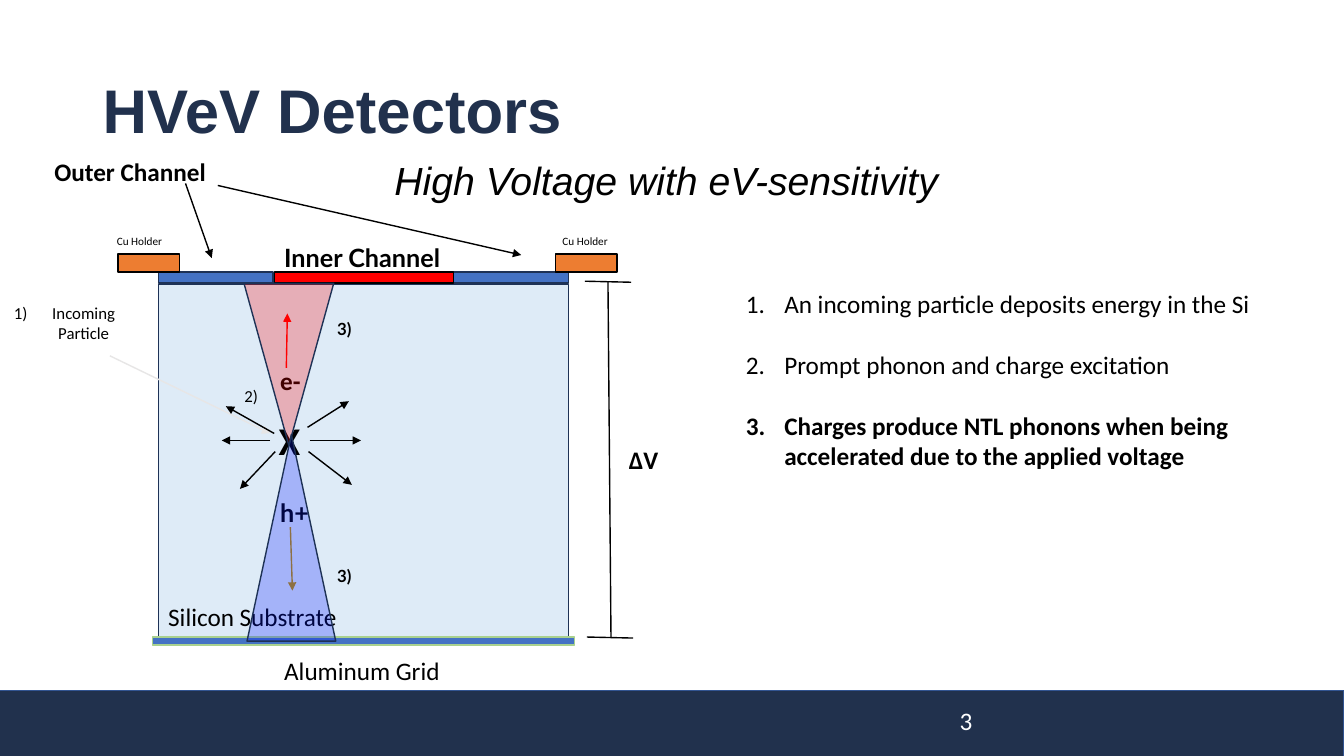
from lxml import etree
from pptx import Presentation, util as u
from pptx.dml import color
from pptx.enum import shapes, text
from pptx.oxml import ns

PX = 9144  # EMU per px, 100 px to the inch
NAVY, EDGE, BLUE, BLACK, WHITE = "21314D", "1E3256", "4472C4", "000000", "FFFFFF"
KIND, ALIGN = shapes.MSO_SHAPE, text.PP_ALIGN

deck = Presentation()
deck.slide_width, deck.slide_height = 1333 * PX, 750 * PX
slide = deck.slides.add_slide(deck.slide_layouts[6])


def rgb(code):
    return color.RGBColor.from_string(code)


def sub(node, tag, **attrs):
    return etree.SubElement(node, ns.qn(tag), attrs)


def shape(box, fill, edge=BLACK, kind=KIND.RECTANGLE, alpha=None, turn=0):
    item = slide.shapes.add_shape(kind, *[n * PX for n in box])
    item.shadow.inherit = False
    item.rotation = turn
    item.fill.solid()
    item.fill.fore_color.rgb = rgb(fill)
    item.line.color.rgb = rgb(edge)
    item.line.width = u.Pt(1)
    if alpha:
        tone = item.fill._xPr.find(".//" + ns.qn("a:srgbClr"))
        sub(tone, "a:alpha", val=str(alpha * 1000))


def line(start, end, tint=BLACK, head=True):
    item = slide.shapes.add_connector(
        shapes.MSO_CONNECTOR.STRAIGHT, *[n * PX for n in (*start, *end)])
    item.line.color.rgb = rgb(tint)
    item.line.width = u.Pt(1)
    if head:
        sub(item.line._get_or_add_ln(), "a:tailEnd", type="triangle")
    sub(item._element.spPr, "a:effectLst")


def style(font, look):
    form = {"size": 18, "name": "Calibri", "color": BLACK, **look}
    for key, value in form.items():
        if key == "color":
            font.color.rgb = rgb(value)
        else:
            setattr(font, key, u.Pt(value) if key == "size" else value)


def label(box, paras, align=ALIGN.LEFT, mid=False, num=None, gap=0, lead=None, **look):
    """Each paragraph is a pair of words and format."""
    frame = slide.shapes.add_textbox(*[n * PX for n in box]).text_frame
    frame.word_wrap = True
    if mid:
        frame.vertical_anchor = text.MSO_ANCHOR.MIDDLE
    for i, (words, form) in enumerate(paras):
        para = frame.paragraphs[0] if i == 0 else frame.add_paragraph()
        if num:
            props = para._p.get_or_add_pPr()
            props.set("marL", str(38 * PX))
            props.set("indent", str(-38 * PX))
            sub(props, "a:buFont", typeface="+mj-lt")
            sub(props, "a:buAutoNum", type=num)
        para.alignment = align
        if lead:
            para.line_spacing = lead
        if i:
            para.space_before = u.Pt(gap)
        run = para.add_run()
        run.text = words
        style(run.font, {**look, **form})


def note(box, words, **look):
    label(box, [(words, {})], **look)


def footer(x, y, w, h):
    shape((x, y, w, h), NAVY, "325491")
    note((x + 943, y + 10, 300, 40), "3", mid=True, color=WHITE)


def heading(x, y, w, h):
    note((x, y, w, h), "HVeV Detectors", mid=True, lead=0.9,
         size=44, name="Arial", color=NAVY, bold=True)
    note((x - 1, y + 115, w, 60), "High Voltage with eV-sensitivity ", lead=0.9,
         align=ALIGN.CENTER, size=28, name="Arial", italic=True)


def sensor(x, y, w, h):
    """The box is the silicon substrate."""
    def at(dx, dy, *size):
        return (x + dx, y + dy, *size)

    # Substrate, electrodes, holders and grid
    shape(at(0, 0, w, h), "DEEBF7", EDGE)
    note(at(0, 310, 264, 40), "Silicon Substrate")
    for dx in (0, w - 114):
        shape(at(dx, -12, 114, 11), BLUE, EDGE)
    shape(at(115, -12, 178, 11), "FF0000")
    for dx, tx in ((-40, -51), (w - 13, 391)):
        shape(at(dx, -30, 61, 18), "ED7D31")
        note(at(tx, -54, 235, 24), "Cu Holder", size=8)
    shape(at(-6, h - 1, w + 12, 8), BLUE, "A9D18E")
    note(at(115, h + 12, 279, 40), "Aluminum Grid")

    # Channel names
    note(at(-113, -132, 309, 40), "Outer Channel", bold=True)
    note(at(115, -47, 667, 71), "Inner Channel", name="Lato", bold=True)
    line(at(27, -100), at(53, -26))
    line(at(59, -98), at(360, -29))

    # Voltage bracket
    for start, end in (((446, -2), (449, 350)), ((423, -3), (469, -2)),
                       ((425, 350), (471, 351))):
        line(at(*start), at(*end), head=False)
    note(at(457, 154, 64, 40), "ΔV", bold=True)

    # Incoming particle and phonons
    note(at(56, 126, 148, 57), "X", align=ALIGN.CENTER, size=28, bold=True)
    note(at(-167, 13, 148, 50), "Incoming Particle", align=ALIGN.CENTER,
         num="arabicParenR", size=12)
    line(at(-48, 71), at(111, 148), "E7E6E6")
    note(at(20, 96, 148, 30), "2) ", align=ALIGN.CENTER, size=12)
    for start, end in (((148, 142), (189, 116)), ((150, 155), (201, 155)),
                       ((149, 166), (192, 199)), ((116, 166), (81, 203)),
                       ((111, 155), (63, 155)), ((115, 148), (67, 121))):
        line(at(*start), at(*end))

    # Charges and their cones
    note(at(111, 76, 125, 40), "e-", bold=True)
    note(at(111, 206, 667, 71), "h+", name="Lato", bold=True)
    line(at(127, 83), at(128, 29), "FF0000")
    line(at(131, 241), at(133, 304), "BF9000")
    cone = {"edge": EDGE, "kind": KIND.ISOSCELES_TRIANGLE, "alpha": 26}
    shape(at(85, -1, 89, 161), "FF0000", turn=180, **cone)
    shape(at(88, 149, 88, 205), "0015FF", **cone)
    for dy in (29, 274):
        note(at(158, dy, 53, 61), "3)", align=ALIGN.CENTER, size=12,
             name="Lato", bold=True)


def steps(x, y, w, h):
    label((x, y, w, h), [
        ("An incoming particle deposits energy in the Si", {}),
        ("Prompt phonon and charge excitation", {}),
        ("Charges produce NTL phonons when being accelerated "
         "due to the applied voltage", {"bold": True}),
    ], num="arabicPeriod", gap=22)


footer(-1, 685, 1334, 66)
heading(92, 40, 1150, 145)
sensor(157, 282, 407, 351)
steps(730, 281, 568, 252)
deck.save("out.pptx")
